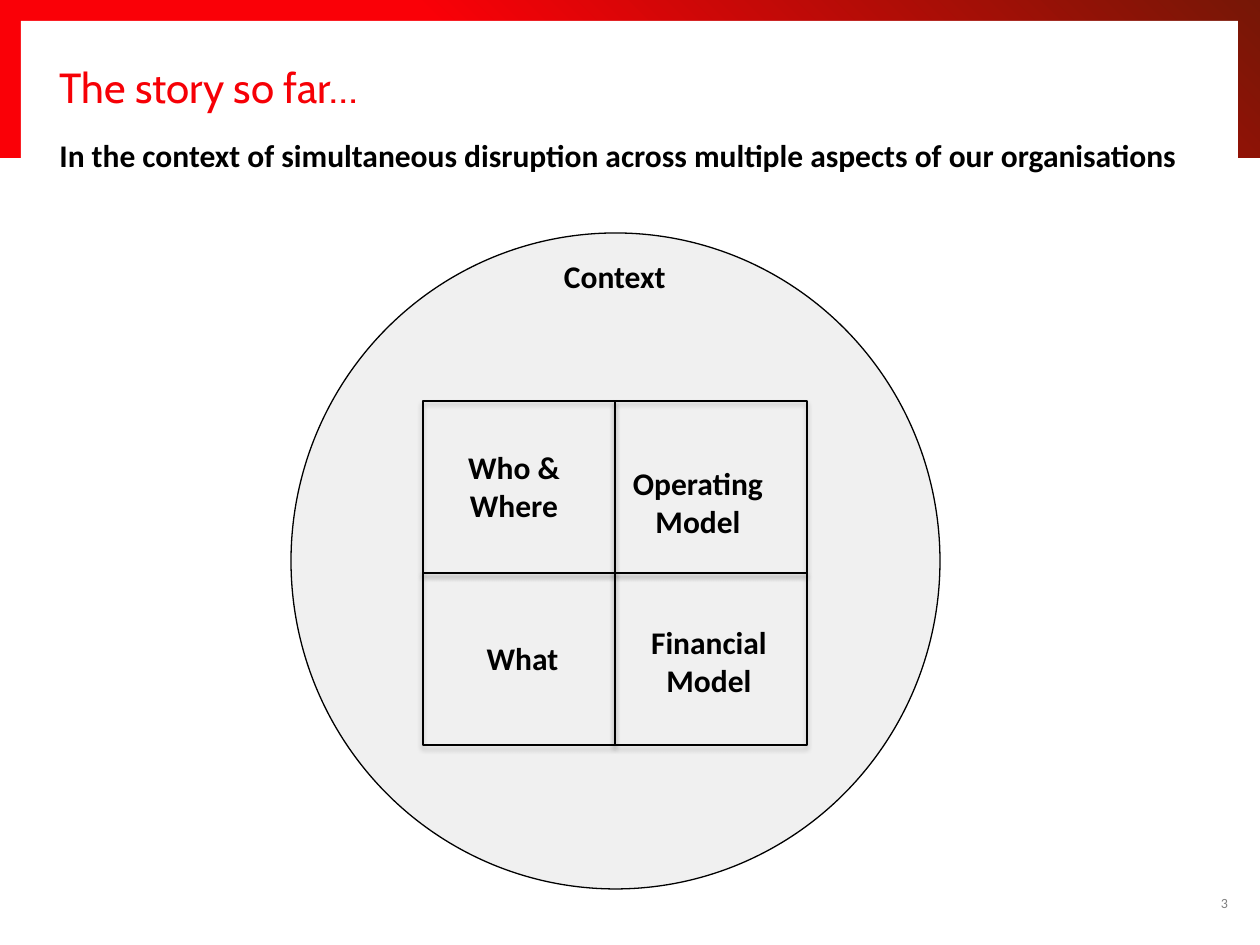
from pptx import Presentation, util as u
from pptx.dml.color import RGBColor
from pptx.enum import shapes as sh, text as tx
from pptx.oxml import parse_xml
from pptx.oxml.ns import nsdecls, qn
from lxml import etree

THEME = dict(
    red="FA0007", dark="761706", title="F60006", white="FFFFFF",
    ink="000000", disc="DDDDDD", grey="808080",
    head="Cabin", body="Calibri", big=24, mid=18, small=8,
)
SCALE = u.Inches(1) / 126
SIZE = (1260, 945)
BAND = (0, 0, 1260, 158)
PANEL = (21, 21, 1217, 914)
DISC = (291, 233, 649, 656)
GRID = (423, 401, 192, 172)

TITLE = ("The story so far…", (47, 55, 892, 53))
LABELS = [
    ("In the context of simultaneous disruption across multiple aspects of our organisations",
     (47, 130, 1181, 50), dict(align="LEFT")),
    ("Who & Where", (431, 442, 166, 89), {}),
    ("Financial Model", (626, 617, 166, 89), {}),
    ("Operating Model", (615, 458, 166, 89), {}),
    ("What", (440, 633, 165, 50), {}),
    ("Context", (564, 257, 102, 38), dict(align="LEFT", inset=False, wrap=False)),
    ("3", (1167, 895, 61, 16),
     dict(align="RIGHT", inset=False, bold=False, size=THEME["small"], color=THEME["grey"])),
]


def emu(box):
    return [round(n * SCALE) for n in box]


def rgb(code):
    return RGBColor.from_string(code)


def place(item, box):
    item.left, item.top, item.width, item.height = emu(box)


def write(item, words, align="CENTER", size=THEME["mid"], color=THEME["ink"],
          font=THEME["body"], bold=True, inset=True, wrap=True, after=0):
    frame = item.text_frame
    frame.word_wrap = wrap
    frame.auto_size = tx.MSO_AUTO_SIZE.NONE
    frame.vertical_anchor = tx.MSO_ANCHOR.TOP
    if not inset:
        frame.margin_left = frame.margin_right = 0
        frame.margin_top = frame.margin_bottom = 0
    para = frame.paragraphs[0]
    para.alignment = getattr(tx.PP_ALIGN, align)
    para.space_after = u.Pt(after)
    run = para.add_run()
    run.text = words
    run.font.name, run.font.size, run.font.bold = font, u.Pt(size), bold
    run.font.color.rgb = rgb(color)


def shape(host, kind, box, fill=None, line=None):
    item = host.add_shape(kind, *emu(box))
    item.shadow.inherit = False
    if fill:
        item.fill.solid()
        item.fill.fore_color.rgb = rgb(fill)
    else:
        item.fill.background()
    if line:
        item.line.color.rgb = rgb(line)
        item.line.width = u.Pt(0.75)
    else:
        item.line.fill.background()
    return item


def shade(item):
    glow = parse_xml(
        f'<a:outerShdw {nsdecls("a")} blurRad="{u.Pt(3.1)}" dist="{u.Pt(1.8)}" '
        f'dir="5400000" rotWithShape="0"><a:srgbClr val="{THEME["ink"]}">'
        '<a:alpha val="35000"/></a:srgbClr></a:outerShdw>')
    item._element.spPr.find(qn("a:effectLst")).append(glow)


def main():
    deck = Presentation()
    deck.slide_width, deck.slide_height = emu(SIZE)
    slide = deck.slides.add_slide(deck.slide_layouts[5])
    items = slide.shapes
    rect, oval = sh.MSO_SHAPE.RECTANGLE, sh.MSO_SHAPE.OVAL

    band = shape(items, rect, BAND)
    band.fill.gradient()
    band.fill.gradient_angle = 45
    stops = zip(band.fill.gradient_stops, (0.4, 1), (THEME["red"], THEME["dark"]))
    for stop, spot, color in stops:
        stop.position = spot
        stop.color.rgb = rgb(color)
    shape(items, rect, PANEL, THEME["white"])
    disc = shape(items, oval, DISC, THEME["disc"], THEME["ink"])
    tint = disc._element.spPr.find(qn("a:solidFill"))[0]
    etree.SubElement(tint, qn("a:alpha")).set("val", "43000")

    words, box = TITLE
    title = items.title
    place(title, box)
    write(title, words, align="LEFT", size=THEME["big"], color=THEME["title"],
          font=THEME["head"], bold=False, after=6)
    items._spTree.append(title._element)

    for words, box, style in LABELS:
        write(items.add_textbox(*emu(box)), words, **style)

    grid = items.add_group_shape()
    left, top, wide, high = GRID
    for col, row in ((0, 0), (1, 1), (1, 0), (0, 1)):
        box = (left + col * wide, top + row * high, wide, high)
        shade(shape(grid.shapes, rect, box, line=THEME["ink"]))

    deck.save("out.pptx")


if __name__ == "__main__":
    main()
